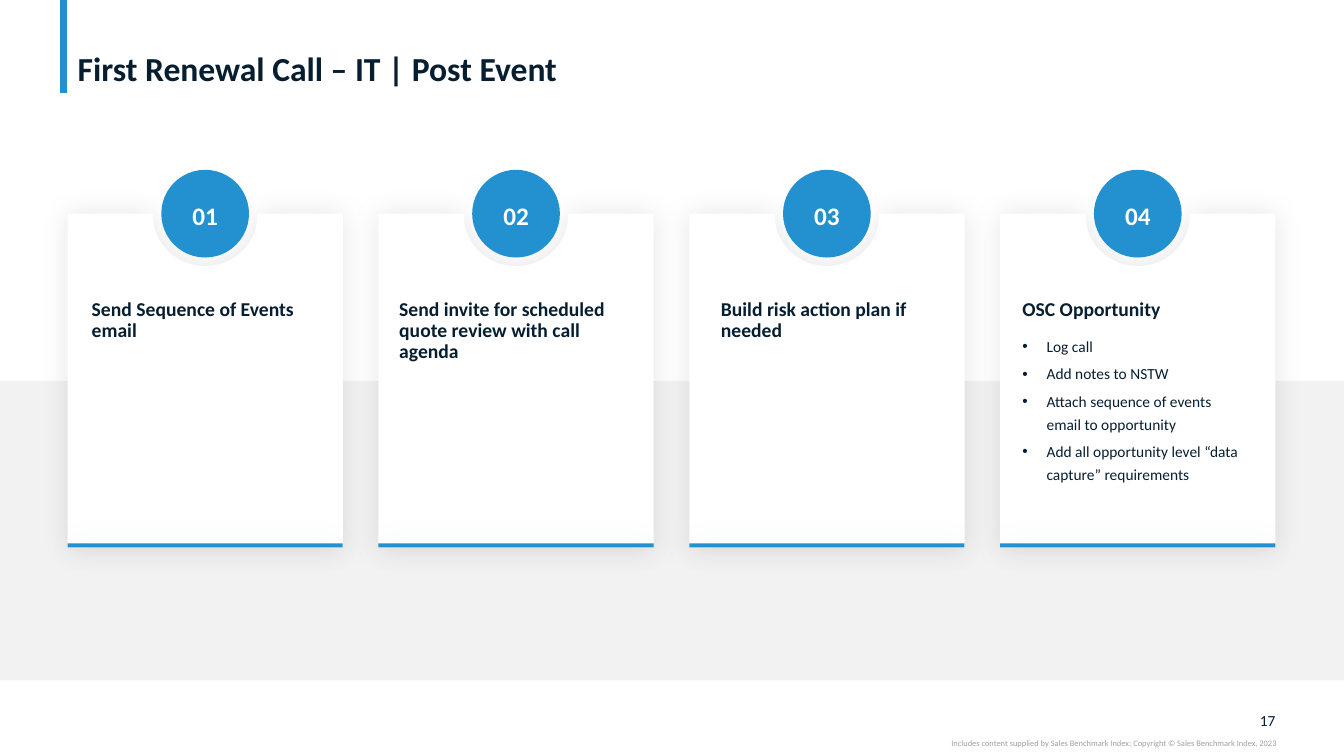
from dataclasses import dataclass
from typing import Any

from lxml import etree
from pptx import Presentation
from pptx.dml.color import RGBColor
from pptx.enum.shapes import MSO_CONNECTOR, MSO_SHAPE
from pptx.enum.text import MSO_ANCHOR, MSO_AUTO_SIZE, PP_ALIGN
from pptx.oxml import parse_xml
from pptx.oxml.ns import nsdecls, qn
from pptx.util import Inches, Pt

LEFT, CENTER, RIGHT = PP_ALIGN.LEFT, PP_ALIGN.CENTER, PP_ALIGN.RIGHT
TOP, MIDDLE, BOTTOM = MSO_ANCHOR.TOP, MSO_ANCHOR.MIDDLE, MSO_ANCHOR.BOTTOM
GROW, FIXED = MSO_AUTO_SIZE.SHAPE_TO_FIT_TEXT, MSO_AUTO_SIZE.NONE
RECTANGLE, OVAL = MSO_SHAPE.RECTANGLE, MSO_SHAPE.OVAL
STRAIGHT = MSO_CONNECTOR.STRAIGHT

FONT = "Calibri"
COLORS = {"blue": "2391CF", "navy": "071E31", "gray": "A0A0A0",
          "band": "F2F2F2", "white": "FFFFFF", "shadow": "000000"}

CARD_LEFT, CARD_RIGHT, CARD_WIDTH = 0.67, 12.65, 2.73
CARD_TOP, CARD_BOTTOM = 2.12, 5.43
BADGE_SIZE, STRIPE_HEIGHT = 0.87, 0.04
NOTCH = [(-0.52, 0), (-0.51, 0.11), (-0.46, 0.35), (-0.25, 0.52), (0, 0.52),
         (0.25, 0.52), (0.46, 0.35), (0.51, 0.11), (0.52, 0)]
CURVE_STARTS = (3, 6)


@dataclass
class Card:
    heading: str
    left: float
    width: float
    height: float


@dataclass
class TextStyle:
    size: float
    color: str = "navy"
    bold: bool = False
    align: Any = LEFT
    anchor: Any = TOP
    auto_size: Any = GROW
    spacing: float = 1.0
    after: float = 0
    insets: tuple[float, float, float, float] = (0, 0, 0, 0)
    bullet: bool = False


CARDS = [
    Card("Send Sequence of Events email", 0.91, 2.24, 0.73),
    Card("Send invite for scheduled quote review with call agenda", 3.96, 2.3, 0.94),
    Card("Build risk action plan if needed", 7.15, 2.07, 0.73),
    Card("OSC Opportunity", 10.14, 2.24, 0.22),
]
TASKS = [
    "Log call",
    "Add notes to NSTW",
    "Attach sequence of events email to opportunity",
    "Add all opportunity level “data capture” requirements",
]

TITLE = TextStyle(24, bold=True, anchor=BOTTOM, auto_size=FIXED, spacing=0.9,
                  insets=(0.1, 0, 0.1, 0))
BADGE = TextStyle(18, "white", True, CENTER, MIDDLE, FIXED, 0.9,
                  insets=(0.08, 0.12, 0.08, 0.05))
HEADING = TextStyle(14, bold=True, spacing=0.9, after=6)
TASK = TextStyle(11, spacing=1.25, after=3, bullet=True)
PAGE_NUMBER = TextStyle(11, align=RIGHT, anchor=MIDDLE)
CREDIT = TextStyle(6, "gray", align=RIGHT)


def set_all(target: Any, values: dict[str, Any]) -> None:
    for name, value in values.items():
        setattr(target, name, value)


def color_of(name: str) -> RGBColor:
    return RGBColor.from_string(COLORS[name])


def place(box: Any, left: float, top: float, width: float, height: float) -> None:
    set_all(box, {"left": Inches(left), "top": Inches(top),
                  "width": Inches(width), "height": Inches(height)})


def add_bullet(para: Any) -> None:
    properties = para._p.get_or_add_pPr()
    properties.set("marL", str(Inches(0.24)))
    properties.set("indent", str(Inches(-0.24)))
    etree.SubElement(properties, qn("a:buFont")).set("typeface", "Arial")
    etree.SubElement(properties, qn("a:buChar")).set("char", "•")


def write(box: Any, lines: list[str], style: TextStyle) -> None:
    frame = box.text_frame
    left, top, right, bottom = map(Inches, style.insets)
    set_all(frame, {"word_wrap": True, "auto_size": style.auto_size,
                    "vertical_anchor": style.anchor,
                    "margin_left": left, "margin_top": top,
                    "margin_right": right, "margin_bottom": bottom})
    frame.text = "\n".join(lines)
    for para in frame.paragraphs:
        if style.bullet:
            add_bullet(para)
        set_all(para, {"alignment": style.align, "line_spacing": style.spacing,
                       "space_before": Pt(0), "space_after": Pt(style.after)})
        for span in para.runs:
            set_all(span.font, {"name": FONT, "size": Pt(style.size), "bold": style.bold})
            span.font.color.rgb = color_of(style.color)


def add_text(page: Any, text: str, style: TextStyle, *area: float) -> None:
    write(page.shapes.add_textbox(*map(Inches, area)), [text], style)


def paint(shape: Any, color: str) -> None:
    shape.shadow.inherit = False
    shape.fill.solid()
    shape.fill.fore_color.rgb = color_of(color)
    shape.line.fill.background()


def add_filled(shapes: Any, kind: Any, color: str, *area: float) -> Any:
    shape = shapes.add_shape(kind, *map(Inches, area))
    paint(shape, color)
    return shape


def add_glow(shape: Any) -> None:
    effects = shape.element.spPr.find(qn("a:effectLst"))
    effects.append(parse_xml(
        f'<a:outerShdw {nsdecls("a")} blurRad="{Pt(20)}" dist="0" dir="0" '
        f'algn="ctr" rotWithShape="0"><a:srgbClr val="{COLORS["shadow"]}">'
        '<a:alpha val="10000"/></a:srgbClr></a:outerShdw>'))


def round_notch(panel: Any) -> None:
    segments = list(next(panel.element.iter(qn("a:path"))))
    for start in CURVE_STARTS:
        curve = etree.Element(qn("a:cubicBezTo"))
        segments[start].addprevious(curve)
        for segment in segments[start:start + 3]:
            curve.append(segment[0])
            segment.getparent().remove(segment)


def add_panel(shapes: Any, left: float) -> None:
    right, center = left + CARD_WIDTH, left + CARD_WIDTH / 2
    corners = [(center + across, CARD_TOP + down) for across, down in NOTCH]
    corners += [(right, CARD_TOP), (right, CARD_BOTTOM), (left, CARD_BOTTOM)]
    outline = shapes.build_freeform(Inches(left), Inches(CARD_TOP))
    outline.add_line_segments([(Inches(x), Inches(y)) for x, y in corners], close=True)
    panel = outline.convert_to_shape()
    round_notch(panel)
    paint(panel, "white")
    add_glow(panel)


def add_card(page: Any, index: int, card: Card) -> None:
    pitch = (CARD_RIGHT - CARD_LEFT - CARD_WIDTH) / (len(CARDS) - 1)
    left = CARD_LEFT + index * pitch
    shapes = page.shapes.add_group_shape().shapes
    add_panel(shapes, left)
    stripe = add_filled(shapes, RECTANGLE, "blue", left, CARD_BOTTOM - STRIPE_HEIGHT,
                        CARD_WIDTH, STRIPE_HEIGHT)
    add_glow(stripe)
    badge = add_filled(shapes, OVAL, "blue", left + (CARD_WIDTH - BADGE_SIZE) / 2,
                       CARD_TOP - BADGE_SIZE / 2, BADGE_SIZE, BADGE_SIZE)
    write(badge, [f"{index + 1:02}"], BADGE)
    add_text(page, card.heading, HEADING, card.left, 2.97, card.width, card.height)


def add_accent(page: Any) -> None:
    accent = page.shapes.add_connector(
        STRAIGHT, Inches(0.63), Inches(0), Inches(0.63), Inches(0.92))
    accent.line.color.rgb = color_of("blue")
    accent.line.width = Pt(5)
    etree.SubElement(accent.element.spPr, qn("a:effectLst"))


def main() -> None:
    deck = Presentation()
    set_all(deck, {"slide_width": Inches(13.33), "slide_height": Inches(7.5)})
    page = deck.slides.add_slide(deck.slide_layouts[1])
    title, body = page.shapes.title, page.placeholders[1]

    add_accent(page)
    add_text(page, "17", PAGE_NUMBER, 12.32, 7.05, 0.33, 0.19)
    add_text(page, "Includes content supplied by Sales Benchmark Index; "
             "Copyright © Sales Benchmark Index, 2023", CREDIT, 7.5, 7.32, 5.16, 0.1)
    add_filled(page.shapes, RECTANGLE, "band", 0, 3.78, 13.33, 2.97)
    place(title, 0.67, 0.04, 11.99, 0.84)
    write(title, ["First Renewal Call – IT | Post Event"], TITLE)
    for index, card in enumerate(CARDS):
        add_card(page, index, card)
    place(body, 10.14, 3.3, 2.24, 1.5)
    write(body, TASKS, TASK)
    body.element.getparent().append(body.element)
    deck.save("out.pptx")


if __name__ == "__main__":
    main()
